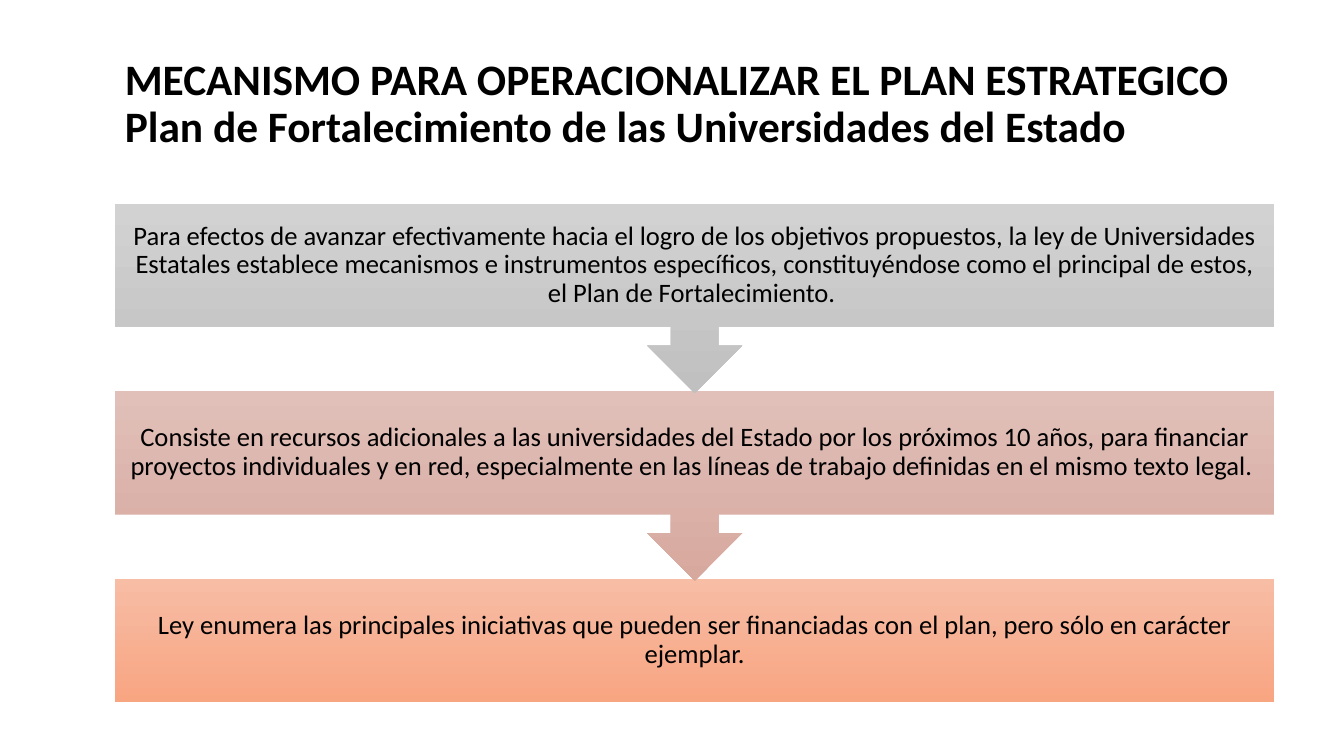
"""Build the slide on how the strategic plan is put to work."""
from pptx import Presentation
from pptx.dml.color import RGBColor
from pptx.enum.shapes import MSO_SHAPE
from pptx.enum.text import MSO_ANCHOR, PP_ALIGN
from pptx.util import Inches, Pt

BOX, CALL = MSO_SHAPE.RECTANGLE, MSO_SHAPE.DOWN_ARROW_CALLOUT
MID = MSO_ANCHOR.MIDDLE
LEFT, CENTER = PP_ALIGN.LEFT, PP_ALIGN.CENTER

TITLE = ["MECANISMO PARA OPERACIONALIZAR EL PLAN ESTRATEGICO",
         "Plan de Fortalecimiento de las Universidades del Estado"]
STEPS = [
    ("gray", "Para efectos de avanzar efectivamente hacia el logro de los objetivos "
     "propuestos, la ley de Universidades Estatales establece mecanismos e instrumentos "
     "específicos, constituyéndose como el principal de estos, el Plan de Fortalecimiento. "),
    ("rose", "Consiste en recursos adicionales a las universidades del Estado por los "
     "próximos 10 años, para financiar proyectos individuales y en red, especialmente en "
     "las líneas de trabajo definidas en el mismo texto legal. "),
    ("peach", "Ley enumera las principales iniciativas que pueden ser financiadas con el "
     "plan, pero sólo en carácter ejemplar."),
]
COLORS = {"text": "000000", "gray": ("D2D2D2", "C0C0C0"),
          "rose": ("E0C0B9", "D7A89E"), "peach": ("F7BDA5", "F8A582")}
FONT = "Calibri"
WIDE, HIGH = 13.33, 7.5
EDGE, SPAN = 1.14, 11.5
TOP, STEP = 2.02, 1.86
BODY, FULL = 1.22, 1.88


def write(shape, lines, size, align, pad, bold=False):
    frame = shape.text_frame
    frame.word_wrap = True
    frame.vertical_anchor = MID
    frame.margin_left = frame.margin_right = Inches(pad)
    frame.margin_top = frame.margin_bottom = Inches(pad)
    para = frame.paragraphs[0]
    para.alignment = align
    para.line_spacing = 0.9
    for num, line in enumerate(lines):
        if num:
            para.add_line_break()
        run = para.add_run()
        run.text = line
        font = run.font
        font.name, font.size, font.bold = FONT, Pt(size), bold
        font.color.rgb = RGBColor.from_string(COLORS["text"])


def add_step(slide, row, tone, text):
    last = row == len(STEPS) - 1
    kind, tall = (BOX, BODY) if last else (CALL, FULL)
    shape = slide.shapes.add_shape(kind, Inches(EDGE), Inches(TOP + row * STEP),
                                   Inches(SPAN), Inches(tall))
    shape.shadow.inherit = False
    shape.line.fill.background()
    shape.fill.gradient()
    shape.fill.gradient_angle = 270
    for stop, color in zip(shape.fill.gradient_stops, COLORS[tone]):
        stop.color.rgb = RGBColor.from_string(color)
    write(shape, [text], 19, CENTER, 0.15)


def main():
    deck = Presentation()
    deck.slide_width, deck.slide_height = Inches(WIDE), Inches(HIGH)
    slide = deck.slides.add_slide(deck.slide_layouts[6])
    head = slide.shapes.add_textbox(Inches(EDGE), Inches(0.32), Inches(SPAN), Inches(1.45))
    write(head, TITLE, 31, LEFT, 0.1, True)
    for row, (tone, text) in reversed(list(enumerate(STEPS))):
        add_step(slide, row, tone, text)
    deck.save("out.pptx")


if __name__ == "__main__":
    main()
